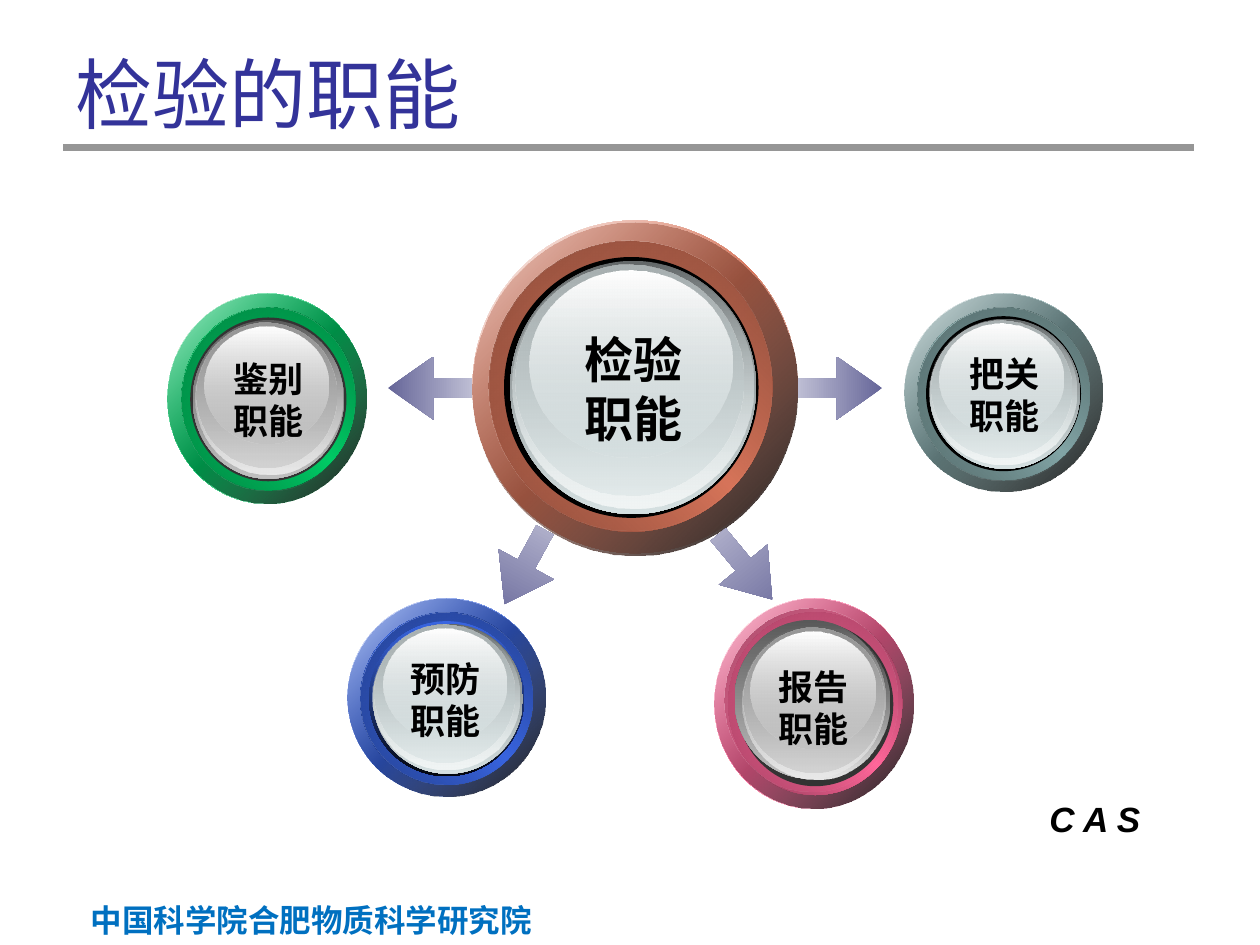
from pptx import Presentation
from pptx.dml.color import RGBColor
from pptx.enum.shapes import MSO_CONNECTOR, MSO_SHAPE
from pptx.enum.text import MSO_ANCHOR, MSO_AUTO_SIZE, PP_ALIGN
from pptx.oxml import parse_xml
from pptx.oxml.ns import qn
from pptx.util import Inches, Pt
from lxml import etree

NS = 'xmlns:a="http://schemas.openxmlformats.org/drawingml/2006/main"'


def paint(shape, stops, angle):
    """Fill with (position, colour, opacity) stops; a single stop is solid."""
    shape.shadow.inherit = False
    shape.line.fill.background()
    if len(stops) == 1:
        shape.fill.solid()
        shape.fill.fore_color.rgb = RGBColor.from_string(stops[0][1])
        return
    marks = "".join(
        f'<a:gs pos="{pos * 1000}"><a:srgbClr val="{tone}">'
        f'<a:alpha val="{alpha * 1000}"/></a:srgbClr></a:gs>'
        for pos, tone, alpha in stops)
    shape.fill.background()
    props = shape._element.spPr
    props.replace(props.find(qn("a:noFill")), parse_xml(
        f'<a:gradFill {NS} rotWithShape="1"><a:gsLst>{marks}</a:gsLst>'
        f'<a:lin ang="{angle * 60000}" scaled="0"/></a:gradFill>'))


def write(frame, lines, align, tone, east, **form):
    """Put lines into a text frame, with font values taken from form."""
    frame.text = "\n".join(lines)
    for para in frame.paragraphs:
        para.alignment = align
        font = para.runs[0].font
        for key, val in form.items():
            setattr(font, key, val)
        font.color.rgb = RGBColor.from_string(tone)
        etree.SubElement(font._element, qn("a:ea"), typeface=east)


deck = Presentation()
deck.slide_width, deck.slide_height = Inches(10), Inches(7.5)
slide = deck.slides.add_slide(deck.slide_layouts[5])
SANS = "Noto Sans CJK SC"

# Title and the rule under it
title = slide.shapes.title
title.left, title.top = Inches(0.5), Inches(0.3)
title.width, title.height = Inches(6.08), Inches(0.87)
title.text_frame.vertical_anchor = MSO_ANCHOR.MIDDLE
write(title.text_frame, ["检验的职能"], PP_ALIGN.LEFT, "333399",
      "Noto Sans CJK JP", name="Noto Sans CJK JP", size=Pt(44))

rule = slide.shapes.add_connector(
    MSO_CONNECTOR.STRAIGHT, Inches(0.5), Inches(1.17), Inches(9.48), Inches(1.17))
rule.line.color.rgb = RGBColor.from_string("969696")
rule.line.width = Pt(3.6)
etree.SubElement(rule._element.spPr, qn("a:effectLst"))

# Ring layers from back to front: left, top, width, height within a button
BIG = [(0, 0, 2.58, 2.64), (0, 0.02, 2.58, 2.64), (0.14, 0.17, 2.24, 2.3),
       (0.13, 0.16, 2.24, 2.3), (0.25, 0.29, 2.02, 2.07), (0.3, 0.32, 1.95, 2.01),
       (0.32, 0.33, 1.91, 1.96), (0.34, 0.35, 1.81, 1.83), (0.45, 0.4, 1.61, 1.48)]
ROUND = [(0, 0, 1.57, 1.57), (0, 0, 1.57, 1.57), (0.1, 0.11, 1.37, 1.37),
         (0.1, 0.11, 1.37, 1.37), (0.17, 0.18, 1.23, 1.23), (0.2, 0.2, 1.19, 1.19),
         (0.2, 0.2, 1.16, 1.16), (0.21, 0.21, 1.11, 1.09), (0.28, 0.24, 0.98, 0.88)]
TALL = [(0, 0, 1.58, 1.67), (0, 0, 1.58, 1.67), (0.11, 0.11, 1.38, 1.45),
        (0.11, 0.11, 1.37, 1.45), (0.18, 0.19, 1.24, 1.3), (0.2, 0.21, 1.2, 1.26),
        (0.22, 0.21, 1.17, 1.23), (0.23, 0.23, 1.11, 1.15), (0.29, 0.26, 0.99, 0.93)]
SHIFT = {3: 0.03, 5: 0.04}  # layers of the report button sit up and left

# Glass tones: base, dark, middle, light
ICE = ("D6E1E2", "636869", "AAB2B3", "F1F5F5")
GREY = ("C0C0C0", "595959", "989898", "E9E9E9")
BLACK = [(0, "000000", 100)]
COAL = [(0, "333333", 100)]
NAVY = [(0, "3965E1", 100), (100, "03060D", 100)]

# Buttons: words, corner, layers, tint, glass, well, shift, text box, size, font
buttons = [
    ("检验", 3.75, 1.75, BIG, "D8755A", ICE, BLACK, {}, (4.53, 2.57, 0.99, 1.04), 28, SANS),
    ("把关", 7.18, 2.33, ROUND, "83A6A7", ICE, BLACK, {}, (7.59, 2.75, 0.77, 0.77), 20, "Arial"),
    ("报告", 5.67, 4.75, TALL, "FF6699", GREY, COAL, SHIFT, (6.07, 5.23, 0.77, 0.77), 20, "Arial"),
    ("鉴别", 1.33, 2.33, TALL, "00CC66", GREY, COAL, {}, (1.75, 2.79, 0.77, 0.77), 20, "Arial"),
    ("预防", 2.76, 4.75, ROUND, "3965E1", ICE, NAVY, {}, (3.15, 5.17, 0.77, 0.77), 20, "Arial"),
]
for word, left, top, rings, tint, glass, well, shift, box, size, face in buttons:
    base, dark, mid, light = glass
    deep, dim = ["".join(f"{round(int(tint[i:i + 2], 16) * part):02X}" for i in (0, 2, 4))
                 for part in (0.54, 0.636)]
    fills = [
        ([(0, "FFFFFF", 100), (50, tint, 100), (100, "FFFFFF", 100)], 45),
        ([(0, tint, 32), (100, "000000", 90)], 45),
        ([(0, deep, 100), (50, tint, 100), (100, deep, 100)], 315),
        ([(0, dim, 100), (100, tint, 0)], 45),
        (well, 90),
        ([(0, dark, 100), (100, base, 100)], 90),
        ([(0, base, 0), (100, light, 100)], 90),
        ([(0, mid, 100), (100, base, 48)], 90),
        ([(0, "FFFFFF", 100), (100, base, 38)], 90),
    ]
    group = slide.shapes.add_group_shape()
    for num, ((x, y, wide, high), (stops, angle)) in enumerate(zip(rings, fills)):
        move = shift.get(num, 0)
        ring = group.shapes.add_shape(
            MSO_SHAPE.OVAL, Inches(left + x - move), Inches(top + y - move),
            Inches(wide), Inches(high))
        paint(ring, stops, angle)
    frame = slide.shapes.add_textbox(*map(Inches, box)).text_frame
    frame.word_wrap = False
    frame.auto_size = MSO_AUTO_SIZE.SHAPE_TO_FIT_TEXT
    write(frame, [word, "职能"], PP_ALIGN.CENTER, "000000", SANS,
          name=face, size=Pt(size), bold=True)

# Arrows from the centre to each function
for left, top, turn in [(6.33, 2.83, 180), (3.83, 4.25, 298.6),
                        (3.08, 2.83, 0), (5.58, 4.25, 230.3)]:
    arrow = slide.shapes.add_shape(
        MSO_SHAPE.LEFT_ARROW, Inches(left), Inches(top), Inches(0.67), Inches(0.5))
    arrow.rotation = turn
    arrow.adjustments[0], arrow.adjustments[1] = 0.31, 0.72
    paint(arrow, [(0, "666699", 100), (100, "BEBED4", 100)], 0)

# Institute name and initials
for text, box, align, tone, wrap, size, slant in [
        ("中国科学院合肥物质科学研究院", (0.59, 7.1, 3.73, 0.4), PP_ALIGN.RIGHT,
         "0070C0", True, 18, False),
        ("C A S", (8.23, 6.28, 0.94, 0.43), PP_ALIGN.LEFT, "000000", False, 20, True)]:
    frame = slide.shapes.add_textbox(*map(Inches, box)).text_frame
    frame.word_wrap = wrap
    frame.auto_size = MSO_AUTO_SIZE.SHAPE_TO_FIT_TEXT
    write(frame, [text], align, tone, SANS,
          name="Arial", size=Pt(size), bold=True, italic=slant)

deck.save("out.pptx")
